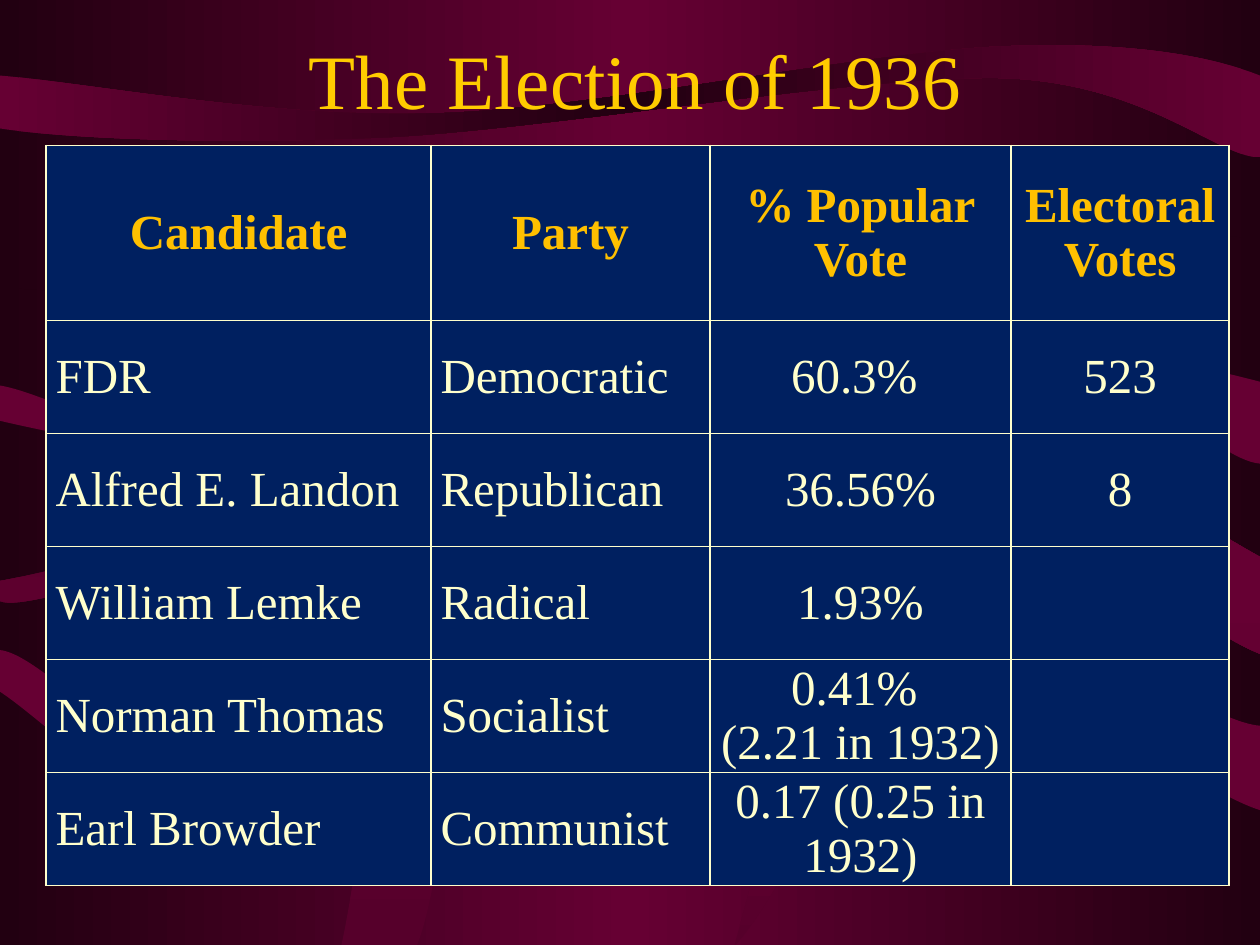
from copy import deepcopy
from pptx import Presentation
from pptx.dml.color import RGBColor
from pptx.enum.text import MSO_ANCHOR as Anchor, PP_ALIGN as Align
from pptx.oxml import parse_xml
from pptx.oxml.ns import nsdecls, qn
from pptx.util import Cm, Pt

HUES = {"dark": "220011", "wine": "660033", "plum": "56002B", "navy": "002060",
        "cream": "FFFFCC", "amber": "FFC000", "gold": "FFCC00"}
FONT = "Times New Roman"


def blend(fill, root, edge, mid, angle=0):
    """Fill with a gradient that runs from edge to mid and back to edge."""
    fill.gradient()
    stops = root.find(".//" + qn("a:gsLst"))
    stops.append(deepcopy(stops[0]))
    for stop, hue, pos in zip(fill.gradient_stops, (edge, mid, edge), (0, 0.5, 1)):
        stop.color.rgb = RGBColor.from_string(HUES[hue])
        stop.position = pos
    fill.gradient_angle = angle


def draw(start, parts):
    """Draw a closed outline: pairs are lines, sixes are Bezier curves."""
    spots = [(part[i] * 1000, part[i + 1] * 1000)
             for part in parts for i in range(0, len(part), 2)]
    pen = slide.shapes.build_freeform(start[0] * 1000, start[1] * 1000, Cm(2.54) / 1000)
    pen.add_line_segments(spots, close=True)
    shape = pen.convert_to_shape()
    lines = iter(shape.element.findall(".//" + qn("a:lnTo")))
    for part in parts:
        curve = next(lines)
        if len(part) == 6:
            curve.tag = qn("a:cubicBezTo")
            for extra in (next(lines), next(lines)):
                curve.append(extra[0])
                extra.getparent().remove(extra)
    return shape


prs = Presentation()
prs.slide_width, prs.slide_height = Cm(25.4), Cm(19.05)
slide = prs.slides.add_slide(prs.slide_layouts[6])
blend(slide.background.fill, slide.element, "dark", "wine")

# Ribbons behind the table: edge, middle, angle, start, outline in units of 2.54 cm
ribbons = [
    ("dark", "wine", 0, (0, 2.28), [
        (1.78, 2.45, 3.4, 1.94, 4.58, 1.74), (4.58, 1.74, 5.67, 1.59, 5.86, 1.55),
        (7.15, 1.27, 9.17, 1.89, 10, 1.89), (10, 7.5), (0, 7.5),
        (0, 7.5, 0, 2.28, 0, 2.28)]),
    ("wine", "dark", 0, (0, 0.6), [
        (0, 1.02), (0.51, 1.1, 1.76, 1.15, 3.08, 1.09), (4.4, 1.02, 6.79, 0.6, 7.94, 0.62),
        (9.09, 0.65, 9.66, 1.25, 10, 1.25), (10, 0.6), (9.65, 0.46, 9.01, 0.32, 7.92, 0.37),
        (6.82, 0.42, 4.77, 0.86, 3.45, 0.9), (2.13, 0.94, 0.72, 0.66, 0, 0.6)]),
    ("wine", "plum", 0, (0, 3.06), [
        (0, 3.34), (0.37, 3.43, 1.75, 3.7, 2.22, 3.75), (2.69, 3.8, 1.9, 3.79, 2.82, 3.64),
        (3.75, 3.48, 6.6, 2.82, 7.8, 2.83), (9, 2.83, 9.63, 3.65, 10, 3.68), (10, 3.03),
        (9.5, 2.9, 8.36, 2.63, 7.01, 2.69), (5.66, 2.74, 3.07, 3.32, 1.9, 3.38),
        (0.73, 3.44, 0.4, 3.13, 0, 3.06)]),
    ("plum", "wine", 90, (2.71, 7.5), [
        (2.91, 6.61, 3.32, 2.69, 4.54, 2.18), (5.75, 1.66, 9.09, 3.92, 10, 4.42), (10, 5.19),
        (9.13, 4.85, 5.91, 2.05, 4.79, 2.43), (3.68, 2.82, 3.66, 6.66, 3.31, 7.5),
        (2.71, 7.5)]),
    ("wine", "plum", 0, (0, 5.16), [
        (0, 5.49), (0.45, 5.78, 1.74, 7.11, 2.69, 6.92), (3.63, 6.74, 4.43, 4.46, 5.65, 4.38),
        (6.87, 4.29, 9.27, 6.2, 10, 6.43), (10, 5.76), (9.38, 5.72, 6.91, 3.77, 5.62, 3.91),
        (4.41, 4.06, 3.67, 6.46, 2.73, 6.67), (1.79, 6.88, 0.45, 5.2, 0, 5.16)]),
    ("plum", "wine", 90, (0, 4.61), [
        (0, 4.77), (0.26, 4.89, 2.08, 4.12, 3.14, 4.28), (4.2, 4.44, 5.92, 5.18, 6.37, 5.72),
        (6.82, 6.25, 5.82, 7.57, 5.83, 7.5), (6.42, 5.32),
        (6.06, 4.74, 4.73, 4.12, 3.66, 4.01), (2.59, 3.89, 0.76, 4.48, 0, 4.61)]),
]
for edge, mid, angle, start, parts in ribbons:
    ribbon = draw(start, parts)
    ribbon.shadow.inherit = False
    ribbon.line.fill.background()
    blend(ribbon.fill, ribbon.element, edge, mid, angle)

# Results table
rows = [
    ("Candidate", "Party", "% Popular\vVote", "Electoral Votes"),
    ("FDR", "Democratic", "60.3% ", "523"),
    ("Alfred E. Landon", "Republican", "36.56%", "8"),
    ("William Lemke", "Radical", "1.93%", ""),
    ("Norman Thomas", "Socialist", "0.41% \v(2.21 in 1932)", ""),
    ("Earl Browder", "Communist", "0.17 (0.25 in 1932)", ""),
]
widths = [7.76, 5.62, 6.07, 4.4]
heights = [3.53] + [2.28] * 5
table = slide.shapes.add_table(len(rows), len(widths), Cm(0.93), Cm(2.93),
                               Cm(sum(widths)), Cm(sum(heights))).table
for col, width in zip(table.columns, widths):
    col.width = Cm(width)
for r, (row, height) in enumerate(zip(rows, heights)):
    table.rows[r].height = Cm(height)
    for c, words in enumerate(row):
        cell = table.cell(r, c)
        cell.fill.solid()
        cell.fill.fore_color.rgb = RGBColor.from_string(HUES["navy"])
        cell.vertical_anchor = Anchor.MIDDLE
        cell.margin_left = cell.margin_right = Cm(0.19)
        cell.margin_top = cell.margin_bottom = 0
        for i, side in enumerate("LRTB"):
            cell._tc.tcPr.insert(i, parse_xml(
                f'<a:ln{side} {nsdecls("a")} w="{Pt(1)}"><a:solidFill>'
                f'<a:srgbClr val="{HUES["cream"]}"/></a:solidFill></a:ln{side}>'))
        para = cell.text_frame.paragraphs[0]
        para.text = words
        para.alignment = Align.CENTER if r == 0 or c > 1 else Align.LEFT
        for run in para.runs:
            run.font.name, run.font.size, run.font.bold = FONT, Pt(28), r == 0
            run.font.color.rgb = RGBColor.from_string(HUES["cream" if r else "amber"])

# Title
frame = slide.shapes.add_textbox(Cm(2.01), 0, Cm(21.59), Cm(3.18)).text_frame
frame.word_wrap = True
frame.vertical_anchor = Anchor.MIDDLE
frame.text = "The Election of 1936"
para = frame.paragraphs[0]
para.alignment = Align.CENTER
font = para.runs[0].font
font.name, font.size = FONT, Pt(44)
font.color.rgb = RGBColor.from_string(HUES["gold"])

prs.save("out.pptx")
